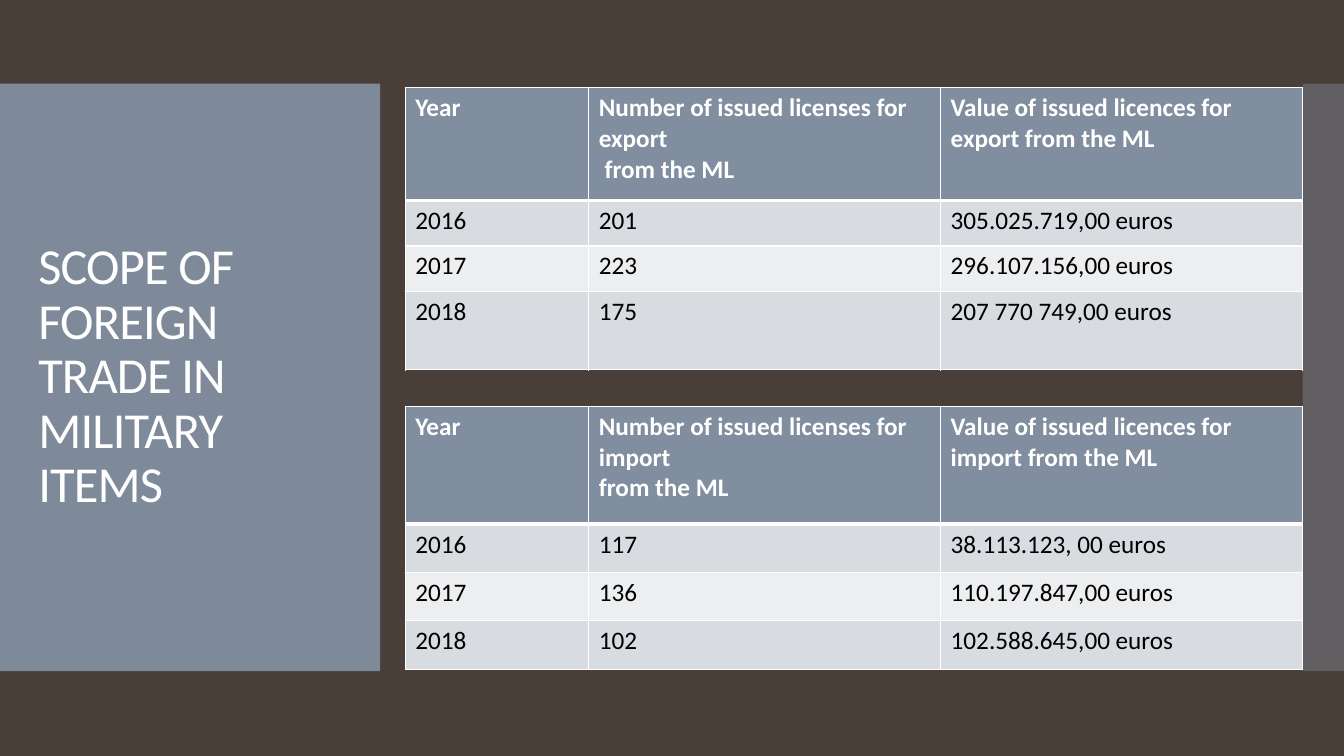
import pptx
import pptx.dml.color
import pptx.enum.shapes
import pptx.enum.text
import pptx.oxml
import pptx.oxml.ns
import pptx.util
from lxml import etree

Inches, Pt = pptx.util.Inches, pptx.util.Pt
COLORS = {"background": "4A3F38", "slate": "818E9F", "odd": "D8DBDF",
          "even": "EDEEF0", "white": "FFFFFF", "black": "000000"}


def rgb(name):
    return pptx.dml.color.RGBColor.from_string(COLORS[name])


def add_border(cell, side, points):
    """Add a white border; sides must come in the order L, R, T, B."""
    line = pptx.oxml.parse_xml(
        f'<a:{side} {pptx.oxml.ns.nsdecls("a")} w="{Pt(points)}"><a:solidFill>'
        f'<a:srgbClr val="{COLORS["white"]}"/></a:solidFill></a:{side}>')
    properties = cell.fill._xPr
    properties.insert(len(properties.findall(pptx.oxml.ns.qn("a:*"))) - 1, line)


presentation = pptx.Presentation()
presentation.slide_width = Inches(13.33)
presentation.slide_height = Inches(7.5)
slide = presentation.slides.add_slide(presentation.slide_layouts[5])
slide.background.fill.solid()
slide.background.fill.fore_color.rgb = rgb("background")

# Title
title = slide.shapes.title
title.left, title.top = Inches(0.28), Inches(1.23)
title.width, title.height = Inches(3.22), Inches(5.03)
title.text_frame.text = "SCOPE OF FOREIGN TRADE IN MILITARY ITEMS"
title.text_frame.word_wrap = True
title.text_frame.auto_size = pptx.enum.text.MSO_AUTO_SIZE.NONE
title.text_frame.vertical_anchor = pptx.enum.text.MSO_ANCHOR.MIDDLE
heading = title.text_frame.paragraphs[0]
heading.alignment = pptx.enum.text.PP_ALIGN.LEFT
heading.line_spacing = 0.9
heading.font.name = "Calibri"
heading.font.size = Pt(36)
heading.font.color.rgb = rgb("white")
heading.runs[0].font._element.set("spc", "-60")

# Translucent side bands, behind the title
for left, width, opacity in [(0, 3.77, 95), (12.92, 0.42, 40)]:
    band = slide.shapes.add_shape(pptx.enum.shapes.MSO_SHAPE.RECTANGLE,
                                  Inches(left), Inches(0.83), Inches(width), Inches(5.83))
    band.shadow.inherit = False
    band.line.fill.background()
    band.fill.solid()
    band.fill.fore_color.rgb = rgb("slate")
    tint = band.element.spPr.find(".//" + pptx.oxml.ns.qn("a:srgbClr"))
    etree.SubElement(tint, pptx.oxml.ns.qn("a:alpha"), val=str(opacity * 1000))
    title.element.addprevious(band.element)

# Export and import tables
trade_tables = [
    (0.87, [1.12, 0.45, 0.45, 0.78], [
        ("Year", "Number of issued licenses for export\n from the ML",
         "Value of issued licences for export from the ML"),
        ("2016", "201", "305.025.719,00 euros"),
        ("2017", "223", "296.107.156,00 euros"),
        ("2018", "175", "207 770 749,00 euros")]),
    (4.03, [1.17, 0.48, 0.48, 0.48], [
        ("Year", "Number of issued licenses for import\nfrom the ML",
         "Value of issued licences for import from the ML"),
        ("2016", "117", "38.113.123, 00 euros"),
        ("2017", "136", "110.197.847,00 euros"),
        ("2018", "102", "102.588.645,00 euros")]),
]
column_widths = [1.82, 3.49, 3.59]
for top, row_heights, records in trade_tables:
    licences = slide.shapes.add_table(len(records), len(column_widths), Inches(4.02), Inches(top),
                                      Inches(8.89), Inches(sum(row_heights))).table
    for column, width in zip(licences.columns, column_widths):
        column.width = Inches(width)
    for r, (height, record) in enumerate(zip(row_heights, records)):
        licences.rows[r].height = Inches(height)
        is_header = r == 0
        for c, words in enumerate(record):
            cell = licences.cell(r, c)
            cell.text = words
            cell.fill.solid()
            cell.fill.fore_color.rgb = rgb("slate" if is_header else "odd" if r % 2 else "even")
            for side, points in [("lnL", 1), ("lnR", 1), ("lnT", 3 if r == 1 else 1),
                                 ("lnB", 3 if is_header else 1)]:
                add_border(cell, side, points)
            for paragraph in cell.text_frame.paragraphs:
                paragraph.font.name = "Calibri"
                paragraph.font.size = Pt(18)
                paragraph.font.bold = is_header
                paragraph.font.color.rgb = rgb("white" if is_header else "black")

presentation.save("out.pptx")
